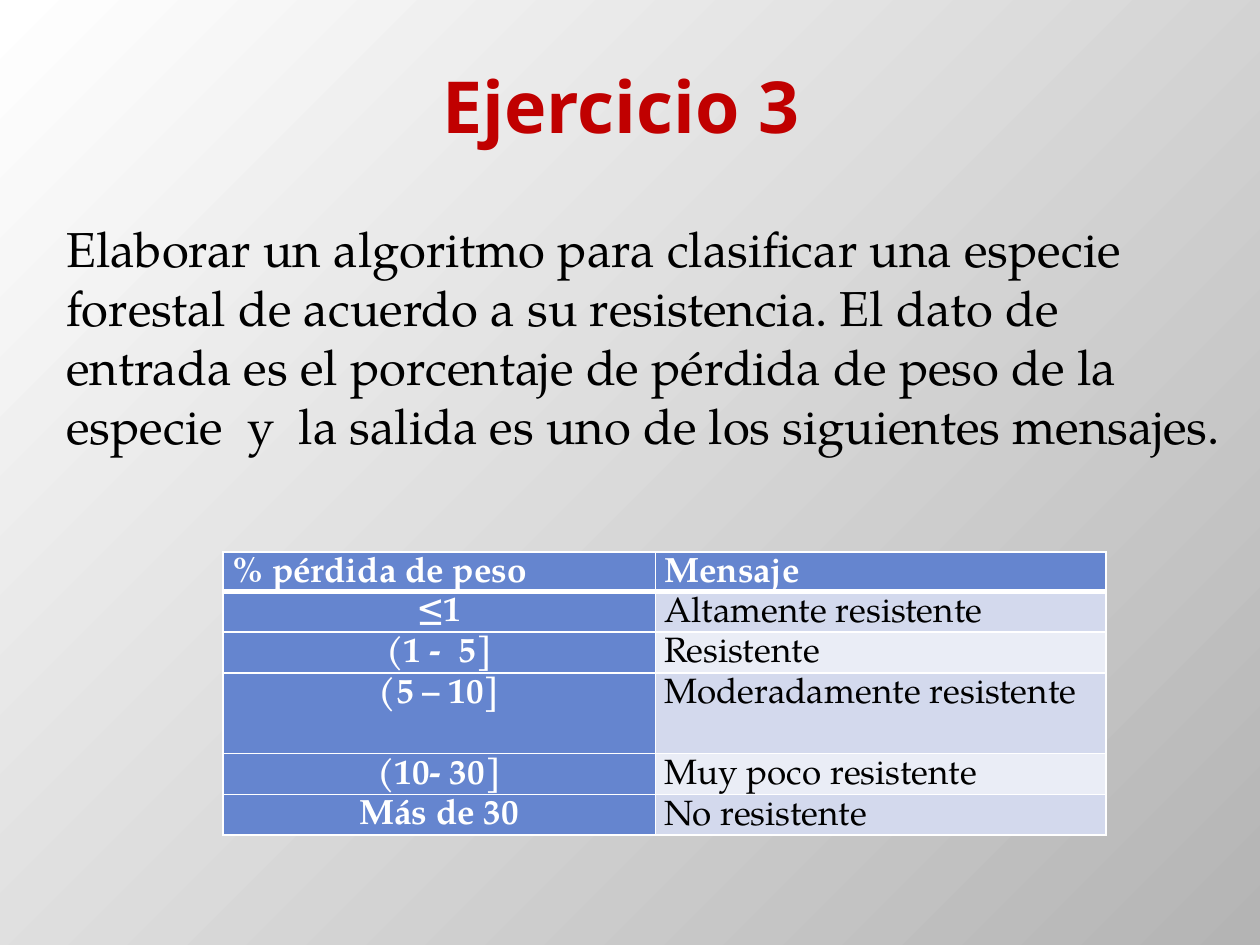
from dataclasses import dataclass

import pptx
import pptx.dml.color
import pptx.enum.text
import pptx.oxml
import pptx.oxml.ns
import pptx.util
from pptx.util import Cm

COLORS = {
    "title": "C00000",
    "text": "000000",
    "white": "FFFFFF",
    "shade": "B4B4B4",
    "header": "6585CF",
    "odd_row": "D3D9ED",
    "even_row": "EAEDF6",
}
TITLE_FONT = "Noto Sans"
BODY_FONT = "TeX Gyre Pagella"
ALIGN = pptx.enum.text.PP_ALIGN
ANCHOR = pptx.enum.text.MSO_ANCHOR

STATEMENT = (
    "Elaborar un algoritmo para clasificar una especie forestal de acuerdo a su "
    "resistencia. El dato de entrada es el porcentaje de pérdida de peso de la "
    "especie  y  la salida es uno de los siguientes mensajes."
)


@dataclass
class ResistanceClass:
    loss: str
    message: str
    height: float = 0.82


HEADER = ResistanceClass("% pérdida de peso", "Mensaje", 0.79)
CLASSES = [
    ResistanceClass("≤1", "Altamente resistente"),
    ResistanceClass("(1 -  5]", "Resistente"),
    ResistanceClass("(5 – 10]", "Moderadamente resistente", 1.63),
    ResistanceClass("(10- 30]", "Muy poco resistente"),
    ResistanceClass("Más de 30", "No resistente"),
]


def rgb(name: str) -> pptx.dml.color.RGBColor:
    return pptx.dml.color.RGBColor.from_string(COLORS[name])


def write_text(frame, text: str, *, size: float, font: str = BODY_FONT,
               color: str = "text", bold: bool = False, align=ALIGN.LEFT,
               line_spacing: float = 1.0) -> None:
    paragraph = frame.paragraphs[0]
    paragraph.alignment = align
    paragraph.line_spacing = line_spacing
    run = paragraph.add_run()
    run.text = text
    run.font.name = font
    run.font.size = pptx.util.Pt(size)
    run.font.bold = bold
    run.font.color.rgb = rgb(color)


def set_borders(cell, top: float = 1, bottom: float = 1) -> None:
    """Draw white borders; widths are in points."""
    properties = cell._tc.get_or_add_tcPr()
    for side, width in (("L", 1), ("R", 1), ("T", top), ("B", bottom)):
        properties.append(pptx.oxml.parse_xml(
            f'<a:ln{side} {pptx.oxml.ns.nsdecls("a")} w="{pptx.util.Pt(width)}">'
            f'<a:solidFill><a:srgbClr val="{COLORS["white"]}"/></a:solidFill>'
            f'</a:ln{side}>'
        ))


def fill_background(slide) -> None:
    fill = slide.background.fill
    fill.gradient()
    fill.gradient_angle = 315
    for stop, color in zip(fill.gradient_stops, ("white", "shade")):
        stop.color.rgb = rgb(color)


def add_title(slide) -> None:
    title = slide.shapes.title
    title.left, title.top = Cm(1.09), Cm(0.53)
    title.width, title.height = Cm(22.86), Cm(3.18)
    title.text_frame.vertical_anchor = ANCHOR.MIDDLE
    write_text(title.text_frame, "Ejercicio 3", size=41, font=TITLE_FONT,
               color="title", bold=True, align=ALIGN.CENTER)


def add_statement(slide) -> None:
    box = slide.shapes.add_textbox(Cm(1.09), Cm(4.29), Cm(24), Cm(6.4))
    box.text_frame.word_wrap = True
    box.text_frame.vertical_anchor = ANCHOR.TOP
    write_text(box.text_frame, STATEMENT, size=28)


def add_resistance_table(slide) -> None:
    rows = [HEADER, *CLASSES]
    height = Cm(sum(row.height for row in rows))
    table = slide.shapes.add_table(
        len(rows), 2, Cm(4.5), Cm(11.13), Cm(17.8), height).table
    for column, width in zip(table.columns, (8.71, 9.09)):
        column.width = Cm(width)

    for row_index, row in enumerate(rows):
        table.rows[row_index].height = Cm(row.height)
        for column_index, text in enumerate((row.loss, row.message)):
            cell = table.cell(row_index, column_index)
            is_header = row_index == 0
            is_label = is_header or column_index == 0
            band = "odd_row" if row_index % 2 else "even_row"
            centered = column_index == 0 and not is_header

            set_borders(cell, top=3 if row_index == 1 else 1,
                        bottom=3 if is_header else 1)
            cell.fill.solid()
            cell.fill.fore_color.rgb = rgb("header" if is_label else band)
            cell.margin_left = cell.margin_right = Cm(0.18)
            cell.margin_top = cell.margin_bottom = 0
            write_text(cell.text_frame, text, size=20, bold=is_label,
                       color="white" if is_label else "text",
                       align=ALIGN.CENTER if centered else ALIGN.JUSTIFY,
                       line_spacing=1.15)


def main() -> None:
    presentation = pptx.Presentation()
    presentation.slide_width, presentation.slide_height = Cm(25.4), Cm(19.05)
    slide = presentation.slides.add_slide(presentation.slide_layouts[5])
    fill_background(slide)
    add_title(slide)
    add_resistance_table(slide)
    add_statement(slide)
    presentation.save("out.pptx")


if __name__ == "__main__":
    main()
